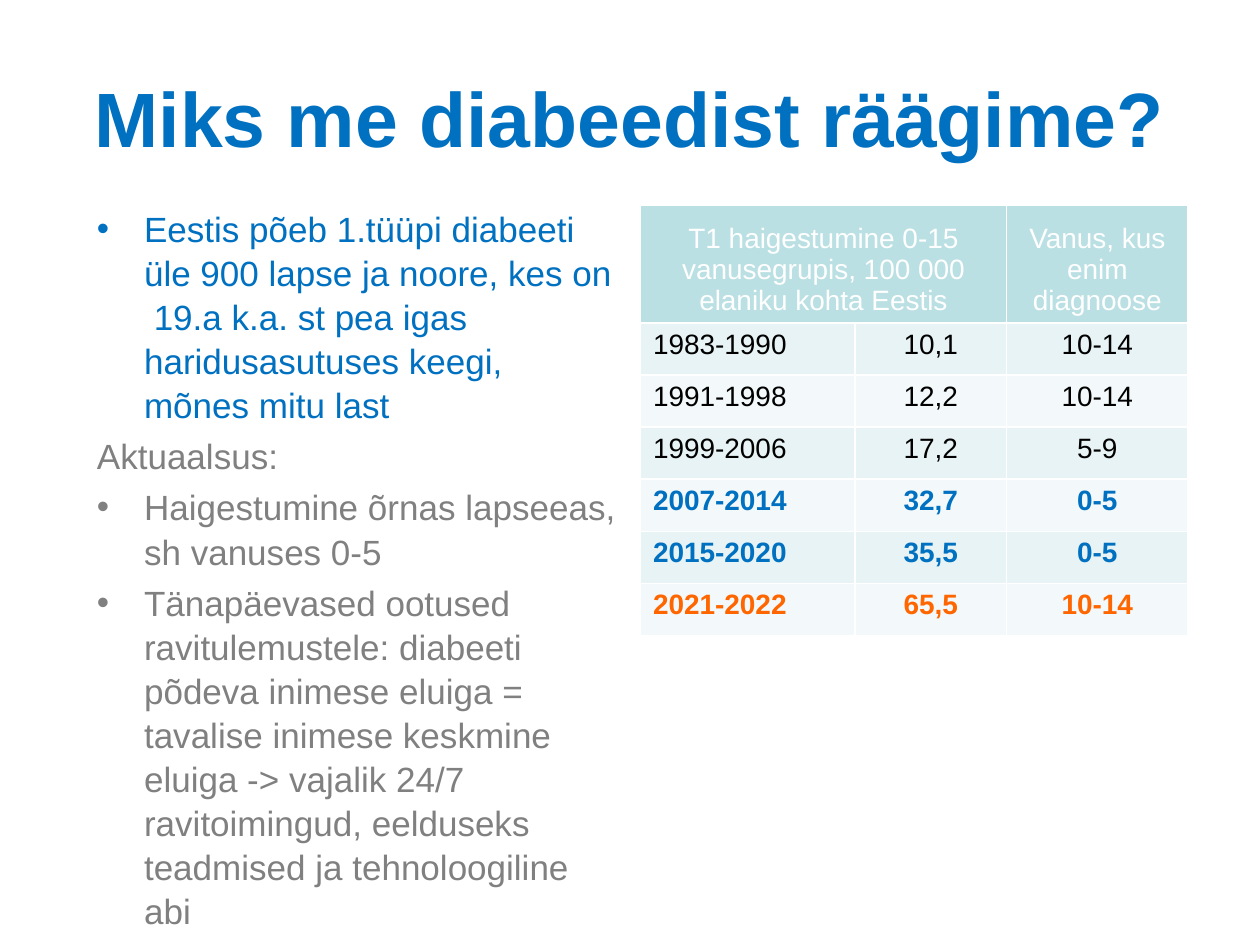
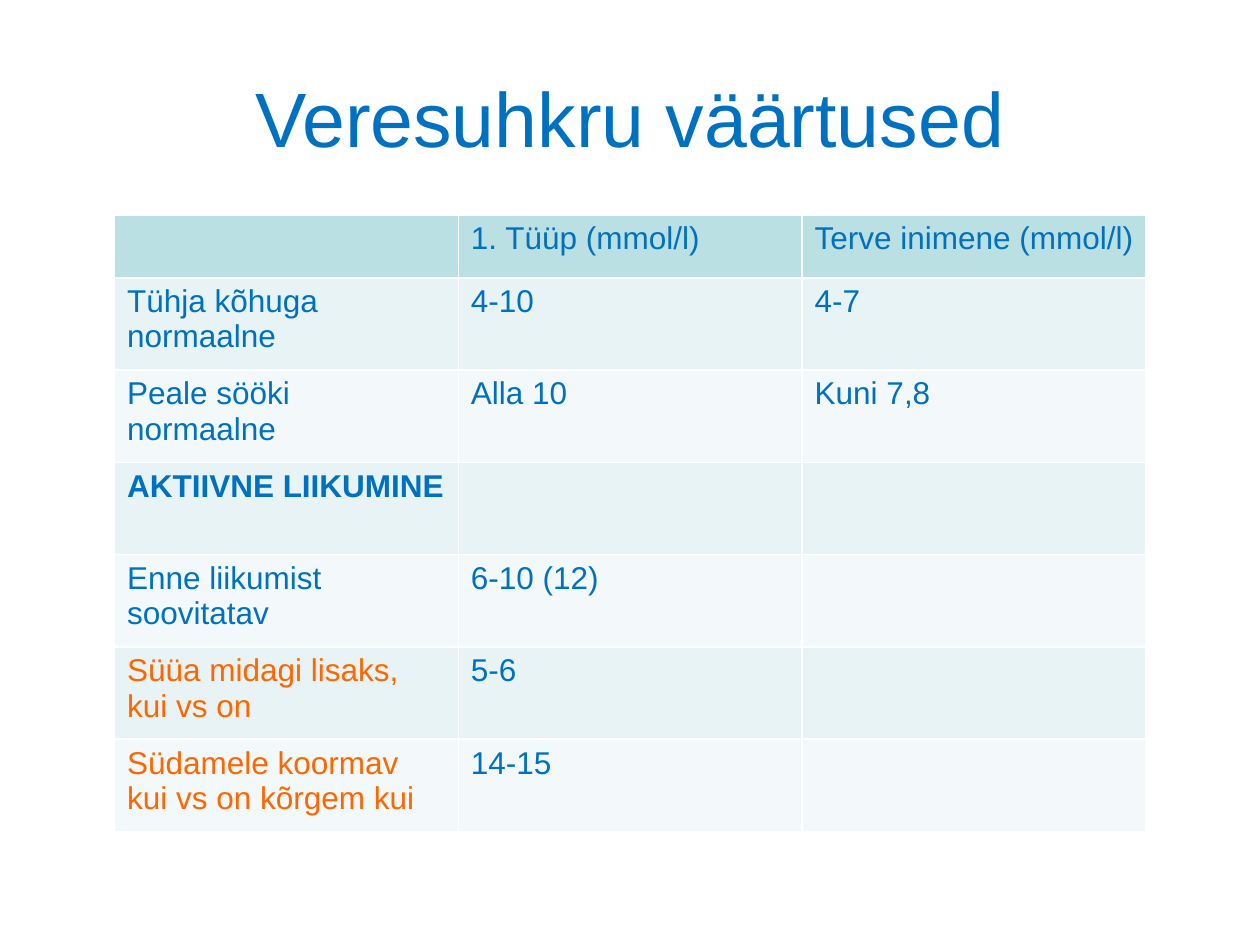
from dataclasses import dataclass

from lxml.etree import SubElement
from pptx import Presentation
from pptx.dml.color import RGBColor
from pptx.enum.text import MSO_ANCHOR as Anchor, MSO_AUTO_SIZE as AutoSize, PP_ALIGN as Align
from pptx.oxml.ns import qn
from pptx.util import Cm, Pt

# Shared look
FONT = "Arial"
BLUE = RGBColor(0x00, 0x70, 0xC0)
GRAY = RGBColor(0x80, 0x80, 0x80)
ORANGE = RGBColor(0xFF, 0x66, 0x00)
BLACK = RGBColor(0x00, 0x00, 0x00)
WHITE = RGBColor(0xFF, 0xFF, 0xFF)
HEADER_FILL = RGBColor(0xBB, 0xE0, 0xE3)
BAND_FILLS = (RGBColor(0xF3, 0xF9, 0xFA), RGBColor(0xE7, 0xF3, 0xF4))
TITLE_BOX = (Cm(1.27), Cm(0.76), Cm(22.86), Cm(3.18))
BODY_BOX = (Cm(1.7), Cm(4.01), Cm(11), Cm(14.1))
HANG = Cm(0.95)


@dataclass
class Item:
    text: str
    color: RGBColor = GRAY
    bullet: bool = True


@dataclass
class Row:
    texts: tuple[str, ...]
    color: RGBColor = BLUE
    first_color: RGBColor | None = None
    bold: bool = False


@dataclass
class Grid:
    left: Cm
    top: Cm
    widths: tuple[Cm, ...]
    header_height: Cm
    row_height: Cm
    size: int
    aligns: tuple[Align, ...]
    header_align: Align
    header_anchor: Anchor
    rows: tuple[Row, ...]
    header_span: int = 1


def write(p, text: str, size: int, color: RGBColor, bold: bool = False) -> None:
    p.text = text
    for r in p.runs:
        for name, value in dict(name=FONT, size=Pt(size), bold=bold).items():
            setattr(r.font, name, value)
        r.font.color.rgb = color


def place(s, box: tuple[Cm, ...]) -> None:
    for name, value in zip(("left", "top", "width", "height"), box):
        setattr(s, name, value)


def add_slide(prs, layout: int, title: str, bold: bool = False):
    slide = prs.slides.add_slide(prs.slide_layouts[layout])
    s = slide.shapes.title
    place(s, TITLE_BOX)
    tf = s.text_frame
    for name, value in dict(word_wrap=True, auto_size=AutoSize.NONE,
                            vertical_anchor=Anchor.MIDDLE).items():
        setattr(tf, name, value)
    p = tf.paragraphs[0]
    write(p, title, 44, BLUE, bold)
    p.alignment = Align.CENTER
    return slide


def fill_list(s, items: tuple[Item, ...]) -> None:
    place(s, BODY_BOX)
    tf = s.text_frame
    tf.auto_size = AutoSize.NONE
    for i, item in enumerate(items):
        p = tf.add_paragraph() if i else tf.paragraphs[0]
        pPr = p._p.get_or_add_pPr()
        pPr.set("marL", str(HANG))
        pPr.set("indent", str(-HANG))
        if item.bullet:
            SubElement(pPr, qn("a:buFont"), typeface=FONT)
            SubElement(pPr, qn("a:buChar"), char="•")
        else:
            SubElement(pPr, qn("a:buNone"))
        p.line_spacing = 1.05
        p.space_before = Pt(4 if i else 0)
        write(p, item.text, 20, item.color)


def add_borders(cell) -> None:
    tcPr = cell._tc.get_or_add_tcPr()
    for side in ("lnL", "lnR", "lnT", "lnB"):
        ln = SubElement(tcPr, qn(f"a:{side}"), w=str(Pt(1)))
        fill = SubElement(ln, qn("a:solidFill"))
        SubElement(fill, qn("a:srgbClr"), val=str(WHITE))


def add_grid(slide, grid: Grid) -> None:
    height = grid.header_height + grid.row_height * (len(grid.rows) - 1)
    s = slide.shapes.add_table(len(grid.rows), len(grid.widths), grid.left, grid.top,
                               sum(grid.widths), height)
    table = s.table
    table.first_row = table.horz_banding = False
    for column, width in zip(table.columns, grid.widths):
        column.width = width
    for i, row in enumerate(grid.rows):
        table.rows[i].height = grid.row_height if i else grid.header_height
        for j, text in enumerate(row.texts):
            cell = table.cell(i, j)
            add_borders(cell)
            cell.fill.solid()
            cell.fill.fore_color.rgb = BAND_FILLS[i % 2] if i else HEADER_FILL
            cell.vertical_anchor = Anchor.TOP if i else grid.header_anchor
            if text:
                p = cell.text_frame.paragraphs[0]
                color = row.first_color if j == 0 and row.first_color else row.color
                write(p, text, grid.size, color, row.bold)
                p.alignment = grid.aligns[j] if i else grid.header_align
    if grid.header_span > 1:
        table.cell(0, 0).merge(table.cell(0, grid.header_span - 1))


REASONS = (
    Item("Eestis põeb 1.tüüpi diabeeti üle 900 lapse ja noore, kes on  19.a k.a. "
         "st pea igas haridusasutuses keegi, mõnes mitu last", BLUE),
    Item("Aktuaalsus:", bullet=False),
    Item("Haigestumine õrnas lapseeas, sh vanuses 0-5"),
    Item("Tänapäevased ootused ravitulemustele: diabeeti põdeva inimese eluiga = "
         "tavalise inimese keskmine eluiga -> vajalik 24/7 ravitoimingud, "
         "eelduseks teadmised ja tehnoloogiline abi"),
)

INCIDENCE = Grid(
    Cm(12.91), Cm(4.13), (Cm(4.33), Cm(3.05), Cm(3.66)), Cm(2.38), Cm(1.05), 16,
    (Align.LEFT, Align.CENTER, Align.CENTER), Align.CENTER, Anchor.BOTTOM,
    (
        Row(("T1 haigestumine 0-15 vanusegrupis, 100 000 elaniku kohta Eestis", "",
             "Vanus, kus enim diagnoose"), WHITE),
        Row(("1983-1990", "10,1", "10-14"), BLACK),
        Row(("1991-1998", "12,2", "10-14"), BLACK),
        Row(("1999-2006", "17,2", "5-9"), BLACK),
        Row(("2007-2014", "32,7", "0-5"), bold=True),
        Row(("2015-2020", "35,5", "0-5"), bold=True),
        Row(("2021-2022", "65,5", "10-14"), ORANGE, bold=True),
    ),
    header_span=2,
)

BLOOD_SUGAR = Grid(
    Cm(2.31), Cm(4.33), (Cm(6.93),) * 3, Cm(1.27), Cm(1.86), 18,
    (Align.LEFT,) * 3, Align.LEFT, Anchor.TOP,
    (
        Row(("", "1. Tüüp (mmol/l)", "Terve inimene (mmol/l)")),
        Row(("Tühja kõhuga normaalne", "4-10", "4-7")),
        Row(("Peale sööki normaalne", "Alla 10", "Kuni 7,8")),
        Row(("AKTIIVNE LIIKUMINE", "", ""), bold=True),
        Row(("Enne liikumist soovitatav", "6-10 (12)", "")),
        Row(("Süüa midagi lisaks,\vkui vs on", "5-6", ""), first_color=ORANGE),
        Row(("Südamele koormav kui vs on kõrgem kui", "14-15", ""), first_color=ORANGE),
    ),
)


def main() -> None:
    prs = Presentation()
    prs.slide_width, prs.slide_height = Cm(25.4), Cm(19.05)

    # Why we talk about diabetes
    slide = add_slide(prs, 1, "Miks me diabeedist räägime?", bold=True)
    fill_list(slide.placeholders[1], REASONS)
    add_grid(slide, INCIDENCE)

    # Blood sugar values
    slide = add_slide(prs, 5, "Veresuhkru väärtused")
    add_grid(slide, BLOOD_SUGAR)

    prs.save("out.pptx")


if __name__ == "__main__":
    main()
